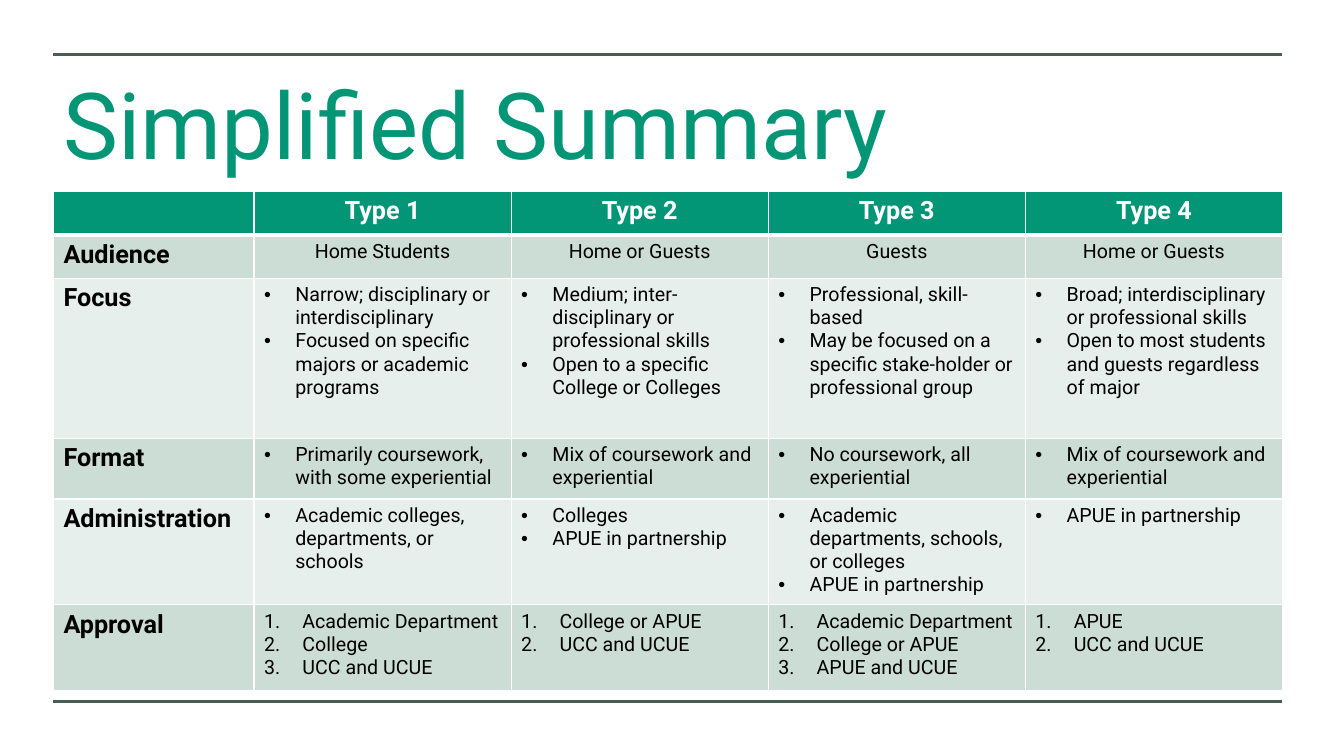
"""Build the Simplified Summary slide comparing four program types."""
from lxml import etree
from pptx import Presentation, util as u
from pptx.dml.color import RGBColor
from pptx.enum import shapes, text
from pptx.oxml import ns

FONT = "Roboto"
COLORS = {"rule": "455F51", "green": "029676", "dark_band": "CCDDD6",
          "light_band": "E7EFEC", "white": "FFFFFF", "black": "000000"}
TITLE = "Simplified Summary"
HEADER = ["", "Type 1", "Type 2", "Type 3", "Type 4"]
ROWS = [
    ("Audience", None, [["Home Students"], ["Home or Guests"], ["Guests"], ["Home or Guests"]]),
    ("Focus", "bullet", [
        ["Narrow; disciplinary or interdisciplinary",
         "Focused on specific majors or academic programs"],
        ["Medium; inter-disciplinary or professional skills",
         "Open to a specific College or Colleges"],
        ["Professional, skill-based",
         "May be focused on a specific stake-holder or professional group"],
        ["Broad; interdisciplinary or professional skills",
         "Open to most students and guests regardless of major"]]),
    ("Format", "bullet", [
        ["Primarily coursework, with some experiential"],
        ["Mix of coursework and experiential"],
        ["No coursework, all experiential"],
        ["Mix of coursework and experiential"]]),
    ("Administration", "bullet", [
        ["Academic colleges, departments, or schools"],
        ["Colleges", "APUE in partnership"],
        ["Academic departments, schools, or colleges", "APUE in partnership"],
        ["APUE in partnership"]]),
    ("Approval", "number", [
        ["Academic Department", "College", "UCC and UCUE"],
        ["College or APUE", "UCC and UCUE"],
        ["Academic Department", "College or APUE", "APUE and UCUE"],
        ["APUE", "UCC and UCUE"]]),
]
LISTS = {"bullet": (0.31, "a:buChar", {"char": "•"}),
         "number": (0.38, "a:buAutoNum", {"type": "arabicPeriod"})}
WIDTH, HEIGHT = 13.33, 7.5
LEFT, CONTENT_WIDTH = 0.53, 12.19
RULE_TOPS = (0.54, 6.96)
TITLE_TOP, TITLE_HEIGHT = 0.65, 1.14
TABLE_TOP = 1.9
COLUMN_WIDTHS = [1.99] + [2.55] * 4
ROW_HEIGHTS = [0.43, 0.43, 1.59, 0.6, 1.05, 0.85]


def color(name):
    return RGBColor.from_string(COLORS[name])


def style_font(paragraph, size, shade, bold=False):
    font = paragraph.font
    font.name, font.size, font.bold = FONT, u.Pt(size), bold
    font.color.rgb = color(shade)


def add_rule(slide, top):
    line = slide.shapes.add_connector(
        shapes.MSO_CONNECTOR.STRAIGHT, u.Inches(LEFT), u.Inches(top),
        u.Inches(LEFT + CONTENT_WIDTH), u.Inches(top))
    line.line.color.rgb = color("rule")
    line.line.width = u.Pt(2.25)
    etree.SubElement(line.element.spPr, ns.qn("a:effectLst"))


def add_title(slide):
    box = slide.shapes.add_textbox(*map(u.Inches, (LEFT, TITLE_TOP, CONTENT_WIDTH, TITLE_HEIGHT)))
    frame = box.text_frame
    frame.word_wrap = True
    frame.vertical_anchor = text.MSO_ANCHOR.MIDDLE
    frame.text = TITLE
    style_font(frame.paragraphs[0], 66, "green")


def add_marker(paragraph, kind):
    indent, tag, attributes = LISTS[kind]
    properties = paragraph._p.get_or_add_pPr()
    properties.set("marL", str(u.Inches(indent)))
    properties.set("indent", str(-u.Inches(indent)))
    if kind == "bullet":
        etree.SubElement(properties, ns.qn("a:buFont"), typeface="Arial")
    etree.SubElement(properties, ns.qn(tag), attributes)


def set_borders(cell, widths):
    properties = cell._tc.get_or_add_tcPr()
    for side, width in zip("LRTB", widths):
        line = etree.SubElement(properties, ns.qn("a:ln" + side), w=str(u.Pt(width)))
        fill = etree.SubElement(line, ns.qn("a:solidFill"))
        etree.SubElement(fill, ns.qn("a:srgbClr"), val=COLORS["white"])


def fill_cell(cell, lines, band, widths, size, shade, bold, centered=False, kind=None):
    set_borders(cell, widths)
    cell.fill.solid()
    cell.fill.fore_color.rgb = color(band)
    cell.text = "\n".join(lines)
    for paragraph in cell.text_frame.paragraphs:
        if kind:
            add_marker(paragraph, kind)
        if centered:
            paragraph.alignment = text.PP_ALIGN.CENTER
        style_font(paragraph, size, shade, bold)


def add_summary_table(slide):
    table = slide.shapes.add_table(
        len(ROW_HEIGHTS), len(COLUMN_WIDTHS), u.Inches(LEFT), u.Inches(TABLE_TOP),
        u.Inches(CONTENT_WIDTH), u.Inches(sum(ROW_HEIGHTS))).table
    for column, width in zip(table.columns, COLUMN_WIDTHS):
        column.width = u.Inches(width)
    for row, height in zip(table.rows, ROW_HEIGHTS):
        row.height = u.Inches(height)
    for index, label in enumerate(HEADER):
        fill_cell(table.cell(0, index), [label], "green", (1, 1, 1, 3), 18, "white", True, True)
    for row, (label, kind, entries) in enumerate(ROWS, 1):
        band = "dark_band" if row % 2 else "light_band"
        widths = (1, 1, 3 if row == 1 else 1, 1)
        fill_cell(table.cell(row, 0), [label], band, widths, 18, "black", True)
        for column, lines in enumerate(entries, 1):
            fill_cell(table.cell(row, column), lines, band, widths, 14, "black", False,
                      kind is None, kind)


def main():
    presentation = Presentation()
    presentation.slide_width, presentation.slide_height = u.Inches(WIDTH), u.Inches(HEIGHT)
    slide = presentation.slides.add_slide(presentation.slide_layouts[6])
    for top in RULE_TOPS:
        add_rule(slide, top)
    add_title(slide)
    add_summary_table(slide)
    presentation.save("out.pptx")


if __name__ == "__main__":
    main()
